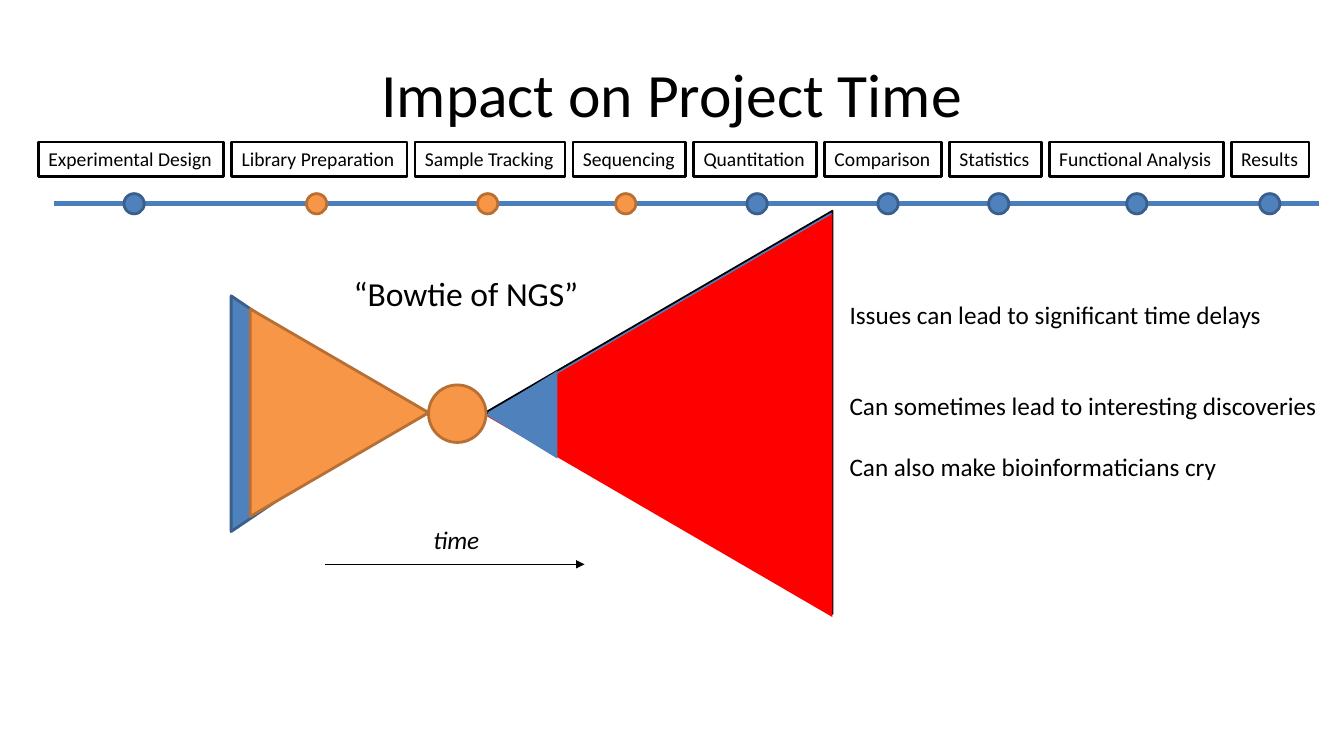
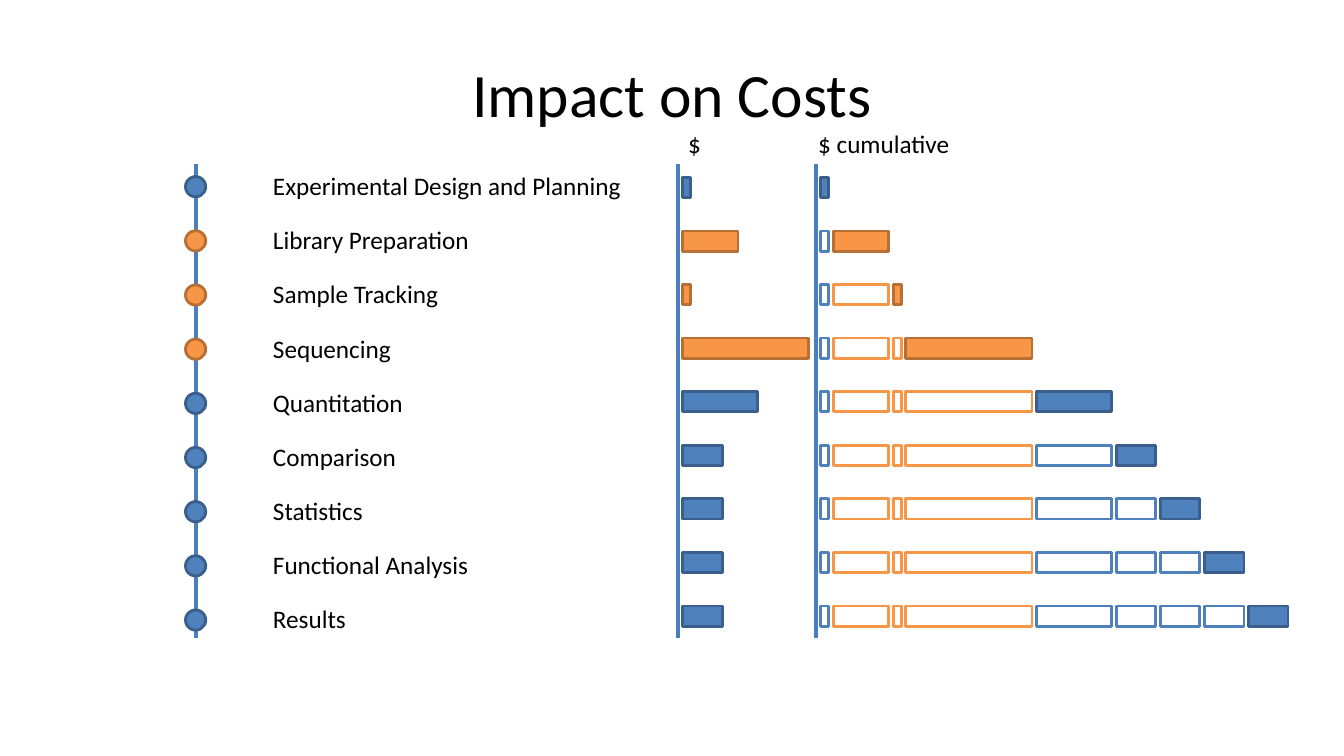
"""Build two slides on how project steps weigh on time and costs."""
from dataclasses import dataclass
from typing import Any

from lxml.etree import SubElement
from pptx import Presentation
from pptx.dml.color import RGBColor
from pptx.enum.shapes import MSO_CONNECTOR, MSO_SHAPE
from pptx.enum.text import MSO_ANCHOR, PP_ALIGN
from pptx.oxml.ns import qn
from pptx.util import Cm, Pt

BLACK, WHITE, RED = "000000", "FFFFFF", "FF0000"
BLUE, NAVY, RAIL = "4F81BD", "3A5F8C", "4B7EBC"
AMBER, BROWN = "F79646", "B76F34"
DOT = 0.51
GAP = 0.2
SEAM = 0.11


@dataclass(frozen=True)
class Step:
    name: str
    width: float
    dot: float
    cost: float
    lab: bool = False
    full: str = ""

    @property
    def fill(self) -> str:
        return AMBER if self.lab else BLUE

    @property
    def edge(self) -> str:
        return BROWN if self.lab else NAVY


@dataclass(frozen=True)
class Wedge:
    left: float
    top: float
    width: float
    height: float
    turn: int
    fill: str
    edge: str = ""
    weight: float = 2


STEPS = (
    Step("Experimental Design", 4.67, 3.38, 0.21, full="Experimental Design and Planning"),
    Step("Library Preparation", 4.42, 7.98, 1.4, True),
    Step("Sample Tracking", 3.78, 12.29, 0.21, True),
    Step("Sequencing", 2.84, 15.77, 3.18, True),
    Step("Quantitation", 3.1, 19.08, 1.9),
    Step("Comparison", 2.95, 22.38, 1),
    Step("Statistics", 2.31, 25.17, 1),
    Step("Functional Analysis", 4.39, 28.65, 1),
    Step("Results", 1.96, 32, 1),
)
WEDGES = (
    Wedge(5.05, 8.23, 5.94, 4.39, 90, BLUE, NAVY),
    Wedge(11.53, 6.02, 10.16, 8.74, 270, BLUE, BLACK, 1.25),
    Wedge(5.94, 8.15, 5.23, 4.5, 90, AMBER, BROWN),
    Wedge(11.53, 6.1, 10.16, 8.74, 270, RED),
    Wedge(12.04, 9.55, 2.21, 1.8, 270, BLUE),
)
NOTES = (
    ("Issues can lead to significant time delays", 0),
    ("Can sometimes lead to interesting discoveries", 43),
    ("Can also make bioinformaticians cry", 22),
)


def tint(code: str) -> RGBColor:
    return RGBColor.from_string(code)


def apply(thing: Any, **values: Any) -> None:
    for key, value in values.items():
        setattr(thing, key, value)


def write(shape: Any, lines: tuple, size: float, align: Any = PP_ALIGN.LEFT,
          anchor: Any = MSO_ANCHOR.TOP, wrap: bool = False, italic: bool = False) -> None:
    frame = shape.text_frame
    apply(frame, word_wrap=wrap, vertical_anchor=anchor)
    for num, (text, space) in enumerate(lines):
        para = frame.add_paragraph() if num else frame.paragraphs[0]
        apply(para, text=text, alignment=align, space_before=Pt(space))
        apply(para.font, name="Calibri", size=Pt(size), italic=italic)
        para.font.color.rgb = tint(BLACK)


def label(slide: Any, text: str, left: float, top: float, width: float,
          height: float = 1.02, size: float = 18, **style: Any) -> None:
    box = slide.shapes.add_textbox(Cm(left), Cm(top), Cm(width), Cm(height))
    write(box, ((text, 0),), size, **style)


def draw(shapes: Any, kind: Any, left: float, top: float, width: float, height: float,
         fill: str, edge: str = "", weight: float = 2) -> Any:
    shape = shapes.add_shape(kind, Cm(left), Cm(top), Cm(width), Cm(height))
    shape.shadow.inherit = False
    shape.fill.solid()
    shape.fill.fore_color.rgb = tint(fill)
    if edge:
        shape.line.color.rgb = tint(edge)
        shape.line.width = Pt(weight)
    else:
        shape.line.fill.background()
    return shape


def rule(slide: Any, left: float, top: float, right: float, base: float,
         color: str = RAIL, weight: float = 3, arrow: bool = False) -> None:
    line = slide.shapes.add_connector(
        MSO_CONNECTOR.STRAIGHT, Cm(left), Cm(top), Cm(right), Cm(base))
    line.line.color.rgb = tint(color)
    line.line.width = Pt(weight)
    props = line.element.spPr
    if arrow:
        SubElement(props.find(qn("a:ln")), qn("a:tailEnd"), type="triangle")
    SubElement(props, qn("a:effectLst"))


def mark(slide: Any, step: Step, mid: float, top: float) -> None:
    draw(slide.shapes, MSO_SHAPE.OVAL, mid - DOT / 2, top, DOT, DOT, step.fill, step.edge)


def start(deck: Any, title: str) -> Any:
    slide = deck.slides.add_slide(deck.slide_layouts[6])
    label(slide, title, 1.7, 0.76, 30.48, 3.18, 44, align=PP_ALIGN.CENTER,
          anchor=MSO_ANCHOR.MIDDLE, wrap=True)
    return slide


def timing(deck: Any) -> None:
    slide = start(deck, "Impact on Project Time")
    for wedge in WEDGES:
        shape = draw(slide.shapes, MSO_SHAPE.ISOSCELES_TRIANGLE, wedge.left, wedge.top,
                     wedge.width, wedge.height, wedge.fill, wedge.edge, wedge.weight)
        shape.rotation = wedge.turn
    draw(slide.shapes, MSO_SHAPE.OVAL, 10.8, 9.7, 1.45, 1.45, AMBER, BROWN)
    label(slide, "“Bowtie of NGS”", 8.66, 6.76, 6.22, 1.27, 24)
    rule(slide, 8.18, 14.22, 14.73, 14.22, BLACK, 0.75, True)
    label(slide, "time", 10.67, 13.08, 1.7, italic=True)

    rule(slide, 1.35, 5.13, 33.25, 5.13)
    left = 0.97
    for step in STEPS:
        mark(slide, step, step.dot, 4.88)
        box = draw(slide.shapes, MSO_SHAPE.RECTANGLE, left, 3.58, step.width, 0.86,
                   WHITE, BLACK)
        write(box, ((step.name, 0),), 14, anchor=MSO_ANCHOR.MIDDLE)
        left += step.width + GAP
    box = slide.shapes.add_textbox(Cm(21.16), Cm(7.42), Cm(12.57), Cm(4.88))
    write(box, NOTES, 18)


def costs(deck: Any) -> None:
    slide = start(deck, "Impact on Costs")
    label(slide, "$", 17.09, 3.1, 0.84)
    label(slide, "$ cumulative", 20.37, 3.1, 3.86)
    for mid in (4.93, 17.09, 20.57):
        rule(slide, mid, 4.14, mid, 16.08)

    last = len(STEPS) - 1
    for row, step in enumerate(STEPS):
        drop = 10.92 * row / last
        mark(slide, step, 4.93, 4.45 + drop)
        label(slide, step.full or step.name, 6.63, 4.17 + drop, 9.6, wrap=True)
        top = 4.47 + 10.8 * row / last
        draw(slide.shapes, MSO_SHAPE.RECTANGLE, 17.2, top, step.cost, DOT,
             step.fill, step.edge)
        stack = slide.shapes.add_group_shape().shapes
        left = 20.68
        for part in STEPS[:row + 1]:
            look = (part.fill, part.edge) if part is step else (WHITE, part.fill)
            draw(stack, MSO_SHAPE.RECTANGLE, left, top, part.cost, DOT, *look)
            left += part.cost + SEAM


def main() -> None:
    deck = Presentation()
    apply(deck, slide_width=Cm(33.87), slide_height=Cm(19.05))
    timing(deck)
    costs(deck)
    deck.save("out.pptx")


if __name__ == "__main__":
    main()
